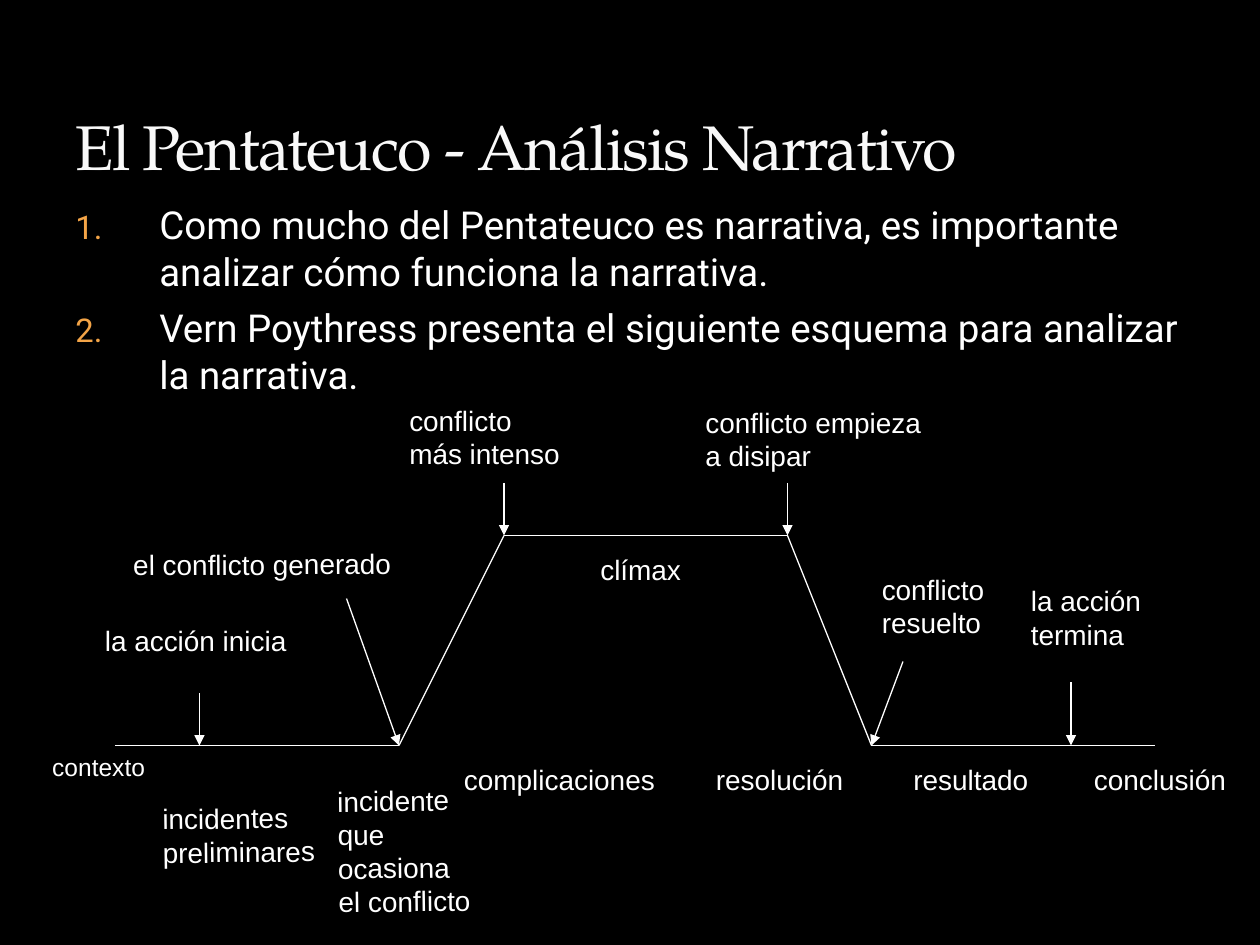
from lxml import etree
from pptx import Presentation, util as u
from pptx.dml.color import RGBColor
from pptx.enum import shapes, text
from pptx.oxml import ns

PX = 7620  # EMU in one px, 120 px to the inch
BLACK = RGBColor(0x00, 0x00, 0x00)
WHITE = RGBColor(0xFF, 0xFF, 0xFF)
TITLE_WHITE = RGBColor(0xF9, 0xF9, 0xF9)
ORANGE = RGBColor(0xF3, 0xA4, 0x47)

# Turning points of the plot, relative to the diagram box
PLOT = [(80, 340), (350, 340), (450, 140), (720, 140), (800, 340), (1070, 340)]
ARROWS = [
    ((160, 290), (160, 340)),
    ((300, 200), PLOT[1]),
    ((450, 90), PLOT[2]),
    ((720, 90), PLOT[3]),
    ((830, 260), PLOT[4]),
    ((990, 280), (990, 340)),
]
# Text, box, rotation
EVENTS = [
    ("incidentes\npreliminares", (113, 387, 169, 77), -0.7),
    ("el conflicto generado", (85, 145, 270, 44), -0.4),
    ("la acción inicia", (58, 218, 198, 44), 0),
    ("conflicto\nmás intenso", (348, 8, 168, 77), 0),
    ("conflicto empieza\na disipar", (630, 10, 230, 77), 0),
    ("clímax", (530, 150, 101, 44), 0),
    ("conflicto\nresuelto", (798, 169, 122, 77), 0),
    ("la acción\ntermina", (940, 180, 130, 77), 0),
]
STAGES = ["complicaciones", "resolución", "resultado", "conclusión"]
STAGE_TABS = [240, 428, 600]


def add_child(parent, tag, **attributes):
    child = etree.SubElement(parent, ns.qn(tag))
    for name, value in attributes.items():
        child.set(name, str(value))
    return child


def add_text(slide, words, box, size, font="Arial", color=WHITE, wrap=False):
    shape = slide.shapes.add_textbox(*(value * PX for value in box))
    frame = shape.text_frame
    frame.word_wrap = wrap
    frame.text = words
    for paragraph in frame.paragraphs:
        for run in paragraph.runs:
            run.font.size = u.Pt(size)
            run.font.name = font
            run.font.color.rgb = color
    return shape


def add_line(slide, start, end, arrow=False):
    line = slide.shapes.add_connector(
        shapes.MSO_CONNECTOR.STRAIGHT, *(value * PX for value in start + end))
    line.line.color.rgb = WHITE
    line.line.width = u.Pt(0.75)
    if arrow:
        add_child(line.line._get_or_add_ln(), "a:tailEnd", type="triangle")
    add_child(line._element.spPr, "a:effectLst")


def add_title(slide, box):
    shape = add_text(slide, "El Pentateuco - Análisis Narrativo", box, 36,
                     "TeX Gyre Pagella", TITLE_WHITE, wrap=True)
    shape.text_frame.vertical_anchor = text.MSO_ANCHOR.BOTTOM
    run = shape.text_frame.paragraphs[0].runs[0]
    run.font._element.set("spc", "-100")


def add_numbered_points(slide, box):
    points = [
        "Como mucho del Pentateuco es narrativa, es importante analizar "
        "cómo funciona la narrativa.",
        "Vern Poythress presenta el siguiente esquema para analizar "
        "la narrativa.",
    ]
    shape = add_text(slide, "\n".join(points), box, 22, "Roboto", wrap=True)
    for paragraph in shape.text_frame.paragraphs:
        paragraph.space_before = u.Pt(6)
        properties = paragraph._p.get_or_add_pPr()
        properties.set("marL", str(80 * PX))
        properties.set("indent", str(-80 * PX))
        add_child(add_child(properties, "a:buClr"), "a:srgbClr", val=ORANGE)
        add_child(properties, "a:buSzPct", val=85000)
        add_child(properties, "a:buFont", typeface="Roboto")
        add_child(properties, "a:buAutoNum", type="arabicPeriod")


def add_plot_diagram(slide, left, top):
    def place(point):
        return left + point[0], top + point[1]

    def place_box(box):
        return place(box[:2]) + box[2:]

    for start, end in zip(PLOT, PLOT[1:]):
        add_line(slide, place(start), place(end))
    for start, end in ARROWS:
        add_line(slide, place(start), place(end), arrow=True)
    for words, box, rotation in EVENTS:
        add_text(slide, words, place_box(box), 16).rotation = rotation

    add_text(slide, "contexto", place_box((8, 340, 142, 40)), 14, wrap=True)
    incident = add_text(slide, "incidente\nque ocasiona\nel conflicto",
                        place_box((280, 370, 170, 140)), 16, wrap=True)
    incident.rotation = -0.7

    stages = add_text(slide, "\t".join(STAGES),
                      place_box((400, 350, 760, 44)), 16, wrap=True)
    properties = stages.text_frame.paragraphs[0]._p.get_or_add_pPr()
    tabs = add_child(properties, "a:tabLst")
    for position in STAGE_TABS:
        add_child(tabs, "a:tab", pos=position * PX, algn="l")


def main():
    presentation = Presentation()
    presentation.slide_width = 1200 * PX
    presentation.slide_height = 900 * PX
    slide = presentation.slides.add_slide(presentation.slide_layouts[6])
    slide.background.fill.solid()
    slide.background.fill.fore_color.rgb = BLACK
    add_numbered_points(slide, (60, 186, 1080, 614))
    add_title(slide, (60, 20, 1080, 160))
    add_plot_diagram(slide, 30, 370)
    presentation.save("out.pptx")


if __name__ == "__main__":
    main()
